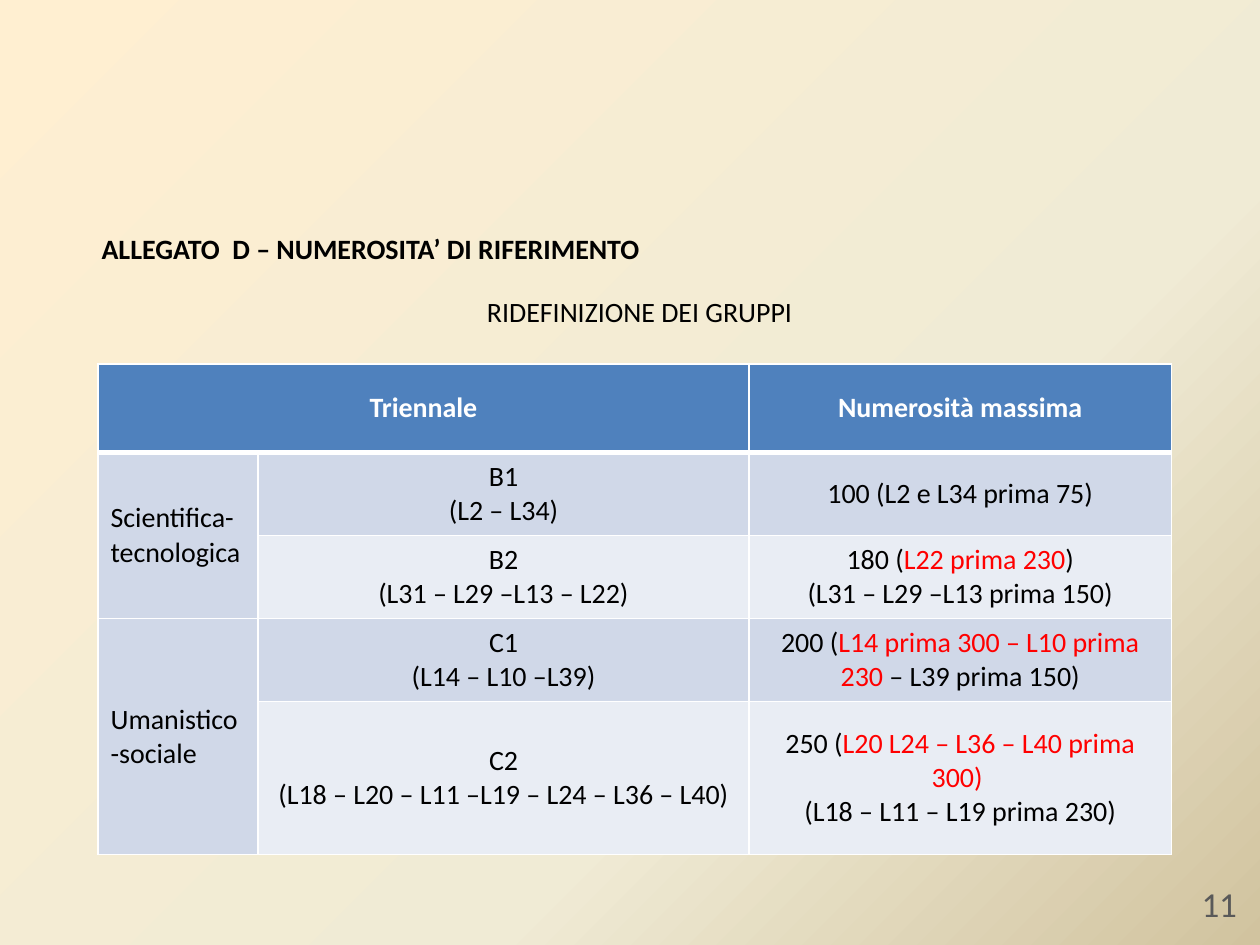
from lxml import etree
from pptx import Presentation
from pptx import util as u
from pptx.dml.color import RGBColor
from pptx.enum import text
from pptx.oxml import parse_xml
from pptx.oxml.ns import nsdecls, qn

Pt = u.Pt
FONT = "Calibri"
COLORS = {
    "black": "000000", "white": "FFFFFF", "red": "FF0000", "grey": "595959",
    "header": "4F81BD", "band": "D0D8E8", "light": "E9EDF4",
}
BACKGROUND = [(0, "FFEFD1"), (65, "F0EBD5"), (100, "D1C39F")]
CENTER, LEFT = text.PP_ALIGN.CENTER, text.PP_ALIGN.LEFT


def write(tf, paragraphs, align, size=16, color="black", bold=False):
    """Fill a text frame; a run is a string or a (string, colour) pair."""
    for i, runs in enumerate(paragraphs):
        p = tf.paragraphs[0] if i == 0 else tf.add_paragraph()
        p.alignment = align
        for run in runs:
            words, run_color = (run, color) if isinstance(run, str) else run
            r = p.add_run()
            r.text = words
            r.font.name, r.font.size, r.font.bold = FONT, Pt(size), bold
            r.font.color.rgb = RGBColor.from_string(COLORS[run_color])


def style_cell(cell, fill, bottom_width):
    """Give a cell white borders and a solid fill."""
    tc_pr = cell._tc.get_or_add_tcPr()
    for side in "LRTB":
        width = bottom_width if side == "B" else 1
        ln = etree.SubElement(tc_pr, qn(f"a:ln{side}"), w=str(Pt(width)))
        solid = etree.SubElement(ln, qn("a:solidFill"))
        etree.SubElement(solid, qn("a:srgbClr"), val=COLORS["white"])
    cell.fill.solid()
    cell.fill.fore_color.rgb = RGBColor.from_string(COLORS[fill])
    cell.vertical_anchor = text.MSO_ANCHOR.MIDDLE


prs = Presentation()
prs.slide_width, prs.slide_height = Pt(720), Pt(540)
s = prs.slides.add_slide(prs.slide_layouts[6])

# Diagonal background gradient
stops = "".join(
    f'<a:gs pos="{pos * 1000}"><a:srgbClr val="{color}"/></a:gs>'
    for pos, color in BACKGROUND
)
s._element.cSld.insert(0, parse_xml(
    f'<p:bg {nsdecls("p", "a")}><p:bgPr><a:gradFill rotWithShape="1">'
    f'<a:gsLst>{stops}</a:gsLst><a:lin ang="{45 * 60000}" scaled="0"/>'
    "</a:gradFill><a:effectLst/></p:bgPr></p:bg>"
))

# Heading, subheading and page number
text_boxes = [
    ((51, 129, 629, 28), "ALLEGATO  D – NUMEROSITA’ DI RIFERIMENTO", LEFT, 16, "black", True),
    ((76.5, 165, 578, 34), "RIDEFINIZIONE DEI GRUPPI", CENTER, 16, "black", False),
    ((675.5, 500.5, 42.5, 29), "11", CENTER, 20, "grey", False),
]
for box, words, align, size, color, bold in text_boxes:
    tf = s.shapes.add_textbox(*map(Pt, box)).text_frame
    tf.word_wrap = True
    write(tf, [[words]], align, size, color, bold)

# Table of groups: each cell is a list of paragraphs, each paragraph a list of runs
rows = [
    [[["Triennale"]], [], [["Numerosità massima"]]],
    [[["Scientifica-tecnologica"]],
     [["B1"], ["(L2 – L34)"]],
     [["100 (L2 e L34 prima 75)"]]],
    [[],
     [["B2"], ["(L31 – L29 –L13 – L22)"]],
     [["180 (", ("L22 prima 230", "red"), ")"], ["(L31 – L29 –L13 prima 150)"]]],
    [[["Umanistico-sociale"]],
     [["C1"], ["(L14 – L10 –L39)"]],
     [["200 (", ("L14 prima 300 – L10 prima 230 ", "red"), "– L39 prima 150)"]]],
    [[],
     [["C2"], ["(L18 – L20 – L11 –L19 – L24 – L36 – L40)"]],
     [["250 (", ("L20 L24 – L36 – L40 prima 300) ", "red")],
      ["(L18 – L11 – L19 prima 230)"]]],
]
col_widths = [91.5, 280.5, 241.5]
row_heights = [50.5, 47.5, 47.5, 47.5, 87.5]
table = s.shapes.add_table(
    len(rows), len(col_widths), Pt(56), Pt(208),
    Pt(sum(col_widths)), Pt(sum(row_heights)),
).table
for column, width in zip(table.columns, col_widths):
    column.width = Pt(width)
for row, height in zip(table.rows, row_heights):
    row.height = Pt(height)

for i, row in enumerate(rows):
    header = i == 0
    for j, paragraphs in enumerate(row):
        cell = table.cell(i, j)
        fill = "header" if header else "band" if j == 0 or i % 2 else "light"
        style_cell(cell, fill, 3 if header else 1)
        write(cell.text_frame, paragraphs,
              CENTER if header or j else LEFT,
              color="white" if header else "black", bold=header)

for first, last in [((0, 0), (0, 1)), ((1, 0), (2, 0)), ((3, 0), (4, 0))]:
    table.cell(*first).merge(table.cell(*last))

prs.save("out.pptx")
